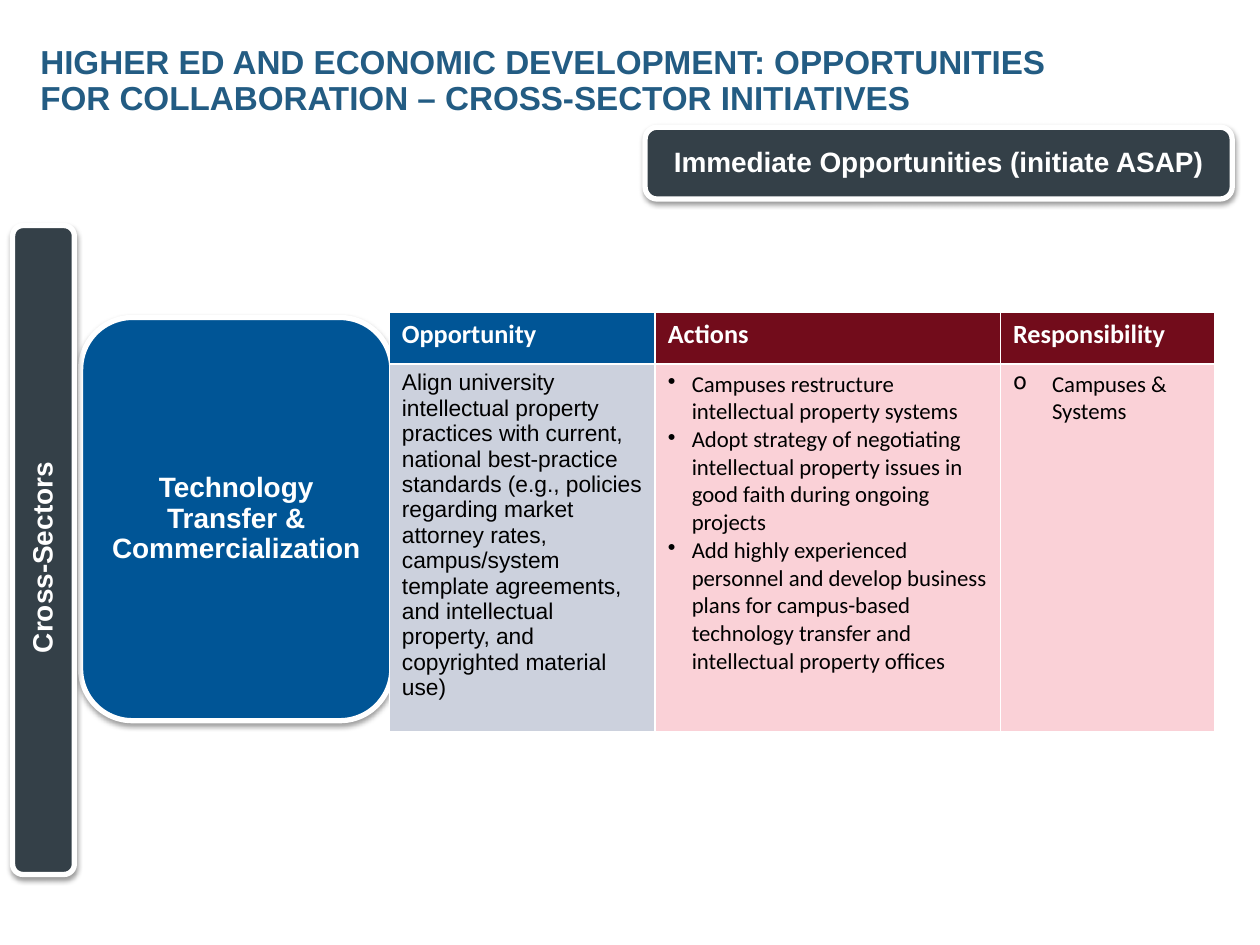
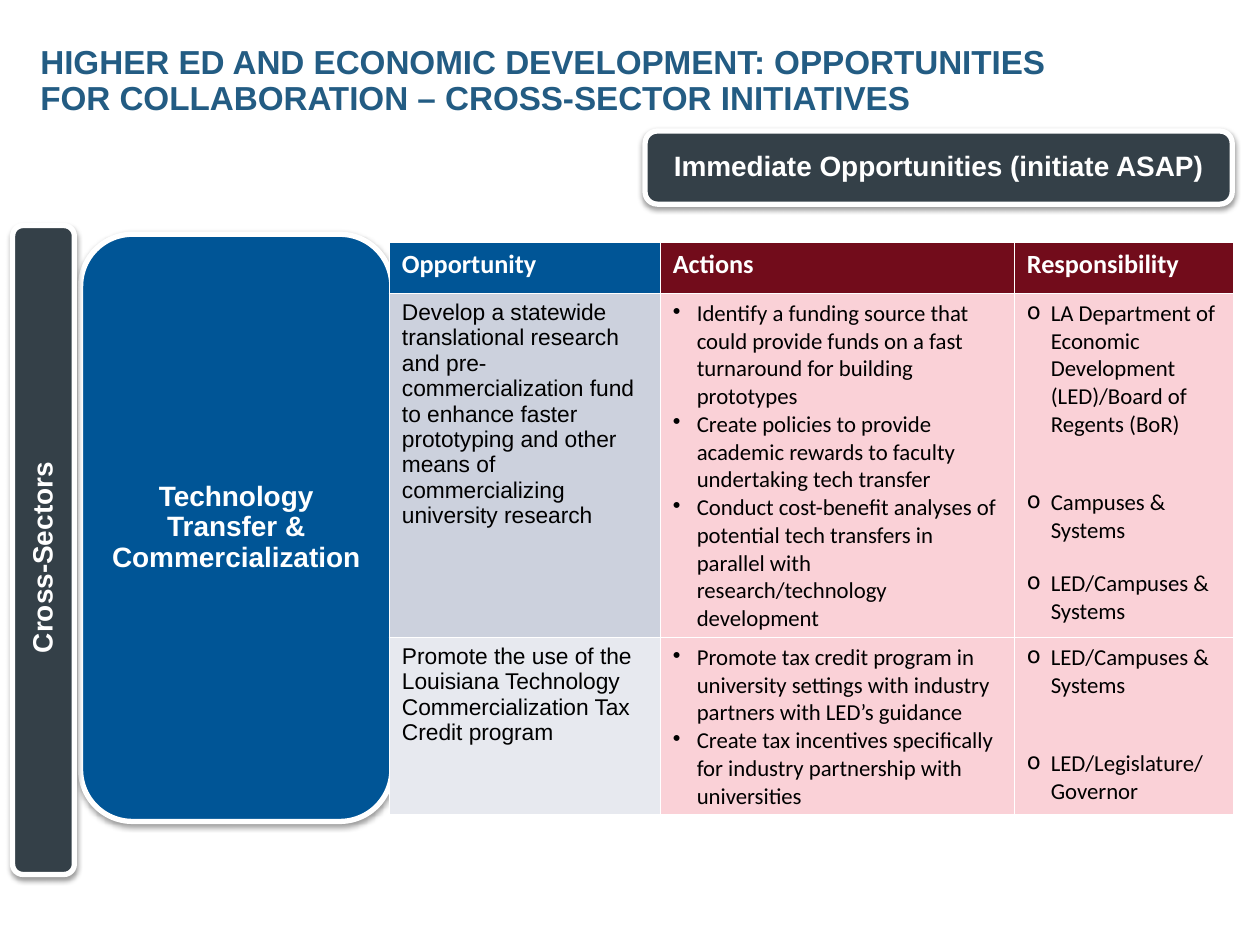
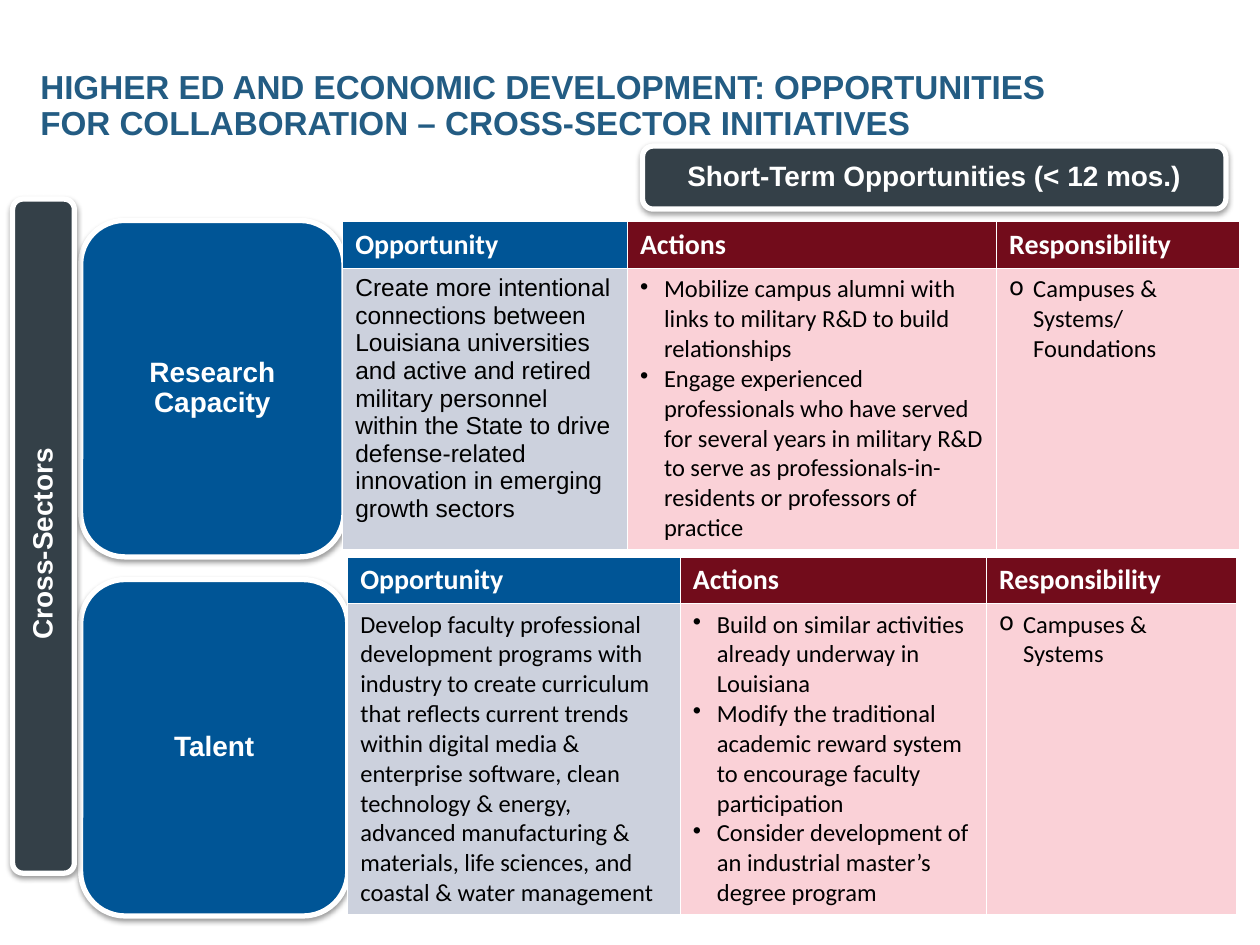
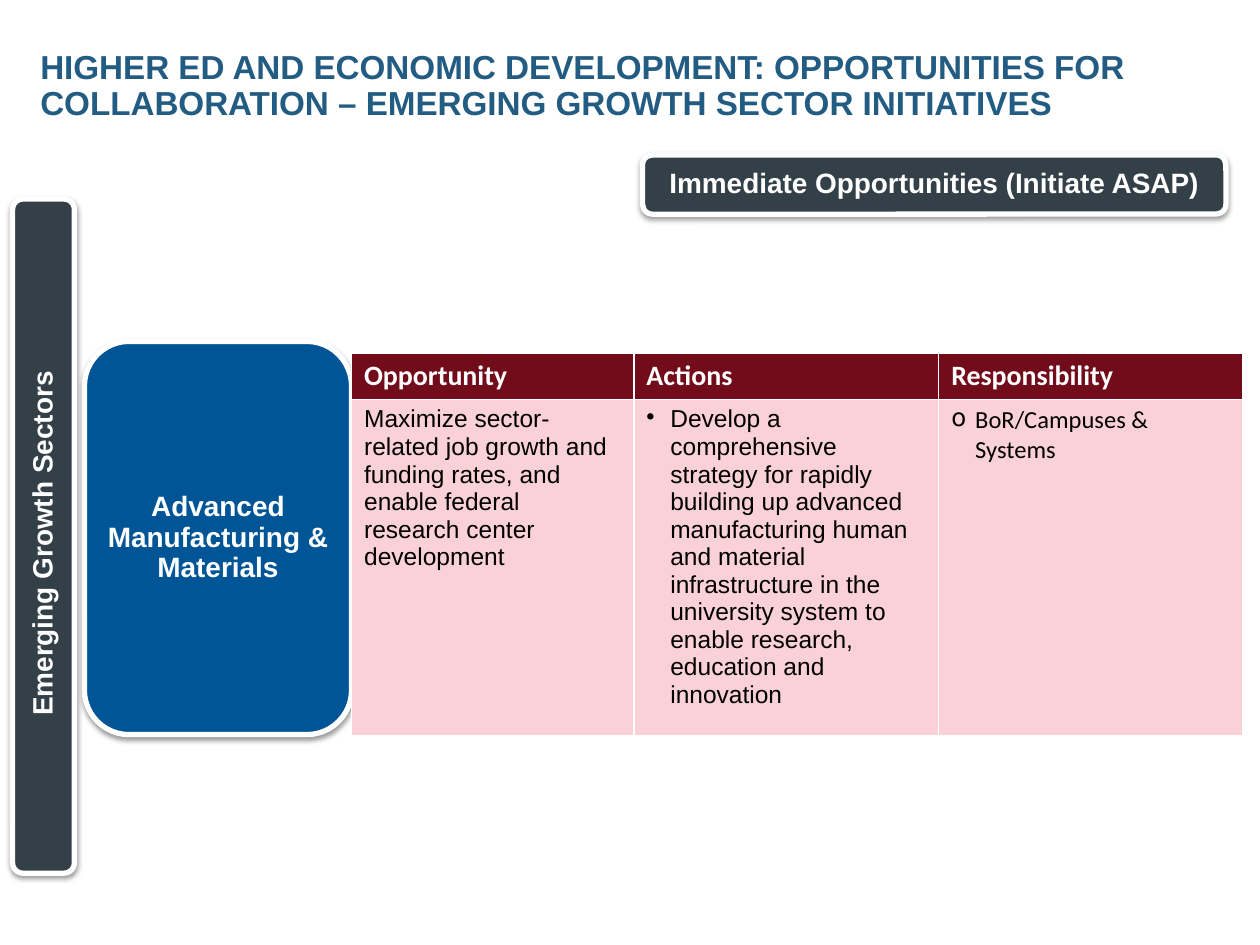
from lxml import etree
from pptx import Presentation
from pptx.dml.color import RGBColor
from pptx.enum.shapes import MSO_SHAPE
from pptx.enum.text import MSO_ANCHOR, PP_ALIGN
from pptx.oxml.ns import qn
from pptx.util import Pt

PX = 9144  # 100 px to the inch

ROUNDED = MSO_SHAPE.ROUNDED_RECTANGLE
MIDDLE = MSO_ANCHOR.MIDDLE
CENTER = PP_ALIGN.CENTER

WHITE = RGBColor(0xFF, 0xFF, 0xFF)
BLACK = RGBColor(0x00, 0x00, 0x00)
TITLE_BLUE = RGBColor(0x23, 0x5C, 0x83)
SLATE = RGBColor(0x34, 0x40, 0x48)
BLUE = RGBColor(0x00, 0x55, 0x96)
MAROON = RGBColor(0x72, 0x0C, 0x1B)
PINK = RGBColor(0xFA, 0xD1, 0xD7)
BLUE_GRAY = RGBColor(0xCC, 0xD1, 0xDD)
PALE_GRAY = RGBColor(0xE7, 0xE9, 0xEF)

ARIAL = "Arial"
CALIBRI = "Calibri"
HEADINGS = ("Opportunity", "Actions", "Responsibility")
BULLET_INDENT = 19
PANEL_MARGINS = (7, 3, 7, 3)
SECTOR_MARGINS = (5, 34, 5, 22)

TITLE_START = "HIGHER ED AND ECONOMIC DEVELOPMENT: OPPORTUNITIES FOR COLLABORATION – "
CROSS_TITLE = TITLE_START + "CROSS-SECTOR INITIATIVES"
GROWTH_TITLE = TITLE_START + "EMERGING GROWTH SECTOR INITIATIVES"

# Boxes are (left, top, width, height). A table row is the opportunity, its
# font, the actions, their font, and the responsibilities, each with the
# space in points above it.
SLIDES = [
    {
        "title": (CROSS_TITLE, (32, 36, 852, 58)),
        "banner": ("Immediate Opportunities (initiate ASAP)", (512, 101, 466, 57)),
        "sector": ("Cross-Sectors", (10, 179, 49, 515)),
        "topics": [("Technology Transfer & Commercialization", (64, 252, 247, 320))],
        "tables": [{
            "corner": (309, 248), "columns": (211, 274, 170), "heights": (41, 271),
            "size": 13, "opportunity_fill": BLUE, "circle_indent": 31,
            "rows": [(
                "Align university intellectual property practices with current, "
                "national best-practice standards (e.g., policies regarding market "
                "attorney rates, campus/system template agreements, and intellectual "
                "property, and copyrighted material use)", ARIAL,
                ["Campuses restructure intellectual property systems",
                 "Adopt strategy of negotiating intellectual property issues in good "
                 "faith during ongoing projects",
                 "Add highly experienced personnel and develop business plans for "
                 "campus-based technology transfer and intellectual property offices"],
                CALIBRI,
                [("Campuses & Systems", 0)],
            )],
        }],
    },
    {
        "title": (CROSS_TITLE, (32, 36, 852, 58)),
        "banner": ("Immediate Opportunities (initiate ASAP)", (512, 104, 466, 58)),
        "sector": ("Cross-Sectors", (10, 179, 49, 515)),
        "topics": [("Technology Transfer & Commercialization", (64, 186, 247, 466))],
        "tables": [{
            "corner": (309, 192), "columns": (215, 281, 174), "heights": (41, 273, 141),
            "size": 13, "opportunity_fill": BLUE, "circle_indent": BULLET_INDENT,
            "rows": [(
                "Develop a statewide translational research and pre-commercialization "
                "fund to enhance faster prototyping and other means of commercializing "
                "university research", ARIAL,
                ["Identify a funding source that could provide funds on a fast "
                 "turnaround for building prototypes",
                 "Create policies to provide academic rewards to faculty undertaking "
                 "tech transfer",
                 "Conduct cost-benefit analyses of potential tech transfers in parallel "
                 "with research/technology development"],
                CALIBRI,
                [("LA Department of Economic Development (LED)/Board of Regents (BoR)", 0),
                 ("Campuses & Systems", 29),
                 ("LED/Campuses & Systems", 14.5)],
            ), (
                "Promote the use of the Louisiana Technology Commercialization Tax "
                "Credit program", ARIAL,
                ["Promote tax credit program in university settings with industry "
                 "partners with LED’s guidance",
                 "Create tax incentives specifically for industry partnership with "
                 "universities"],
                CALIBRI,
                [("LED/Campuses & Systems", 0),
                 ("LED/Legislature/Governor", 29)],
            )],
        }],
    },
    {
        "title": (CROSS_TITLE, (32, 56, 852, 58)),
        "banner": ("Short-Term Opportunities (< 12 mos.)", (510, 116, 463, 50)),
        "sector": ("Cross-Sectors", (10, 158, 49, 535)),
        "topics": [("Research Capacity", (64, 175, 209, 267)),
                   ("Talent", (64, 460, 212, 267))],
        "tables": [{
            "corner": (272, 176), "columns": (226, 293, 193), "heights": (37, 223),
            "size": 14, "opportunity_fill": BLUE, "circle_indent": BULLET_INDENT,
            "rows": [(
                "Create more intentional connections between Louisiana universities "
                "and active and retired military personnel within the State to drive "
                "defense-related innovation in emerging growth sectors", ARIAL,
                ["Mobilize campus alumni with links to military R&D to build "
                 "relationships",
                 "Engage experienced professionals who have served for several years "
                 "in military R&D to serve as professionals-in-residents or professors "
                 "of practice"],
                CALIBRI,
                [("Campuses & Systems/ Foundations", 0)],
            )],
        }, {
            "corner": (276, 442), "columns": (264, 243, 199), "heights": (37, 247),
            "size": 14, "opportunity_fill": BLUE, "circle_indent": BULLET_INDENT,
            "rows": [(
                "Develop faculty professional development programs with industry to "
                "create curriculum that reflects current trends within digital media & "
                "enterprise software, clean technology & energy, advanced manufacturing "
                "& materials, life sciences, and coastal & water management", CALIBRI,
                ["Build on similar activities already underway in Louisiana",
                 "Modify the traditional academic reward system to encourage faculty "
                 "participation",
                 "Consider development of an industrial master’s degree program"],
                CALIBRI,
                [("Campuses & Systems", 0)],
            )],
        }],
    },
    {
        "title": (GROWTH_TITLE, (32, 26, 876, 86)),
        "banner": ("Immediate Opportunities (Initiate ASAP)", (510, 123, 463, 47)),
        "sector": ("Emerging Growth Sectors", (10, 158, 49, 535)),
        "topics": [("Advanced Manufacturing & Materials", (67, 271, 212, 312))],
        "tables": [{
            "corner": (279, 280), "columns": (224, 242, 241), "heights": (37, 252),
            "size": 14, "opportunity_fill": MAROON, "circle_indent": BULLET_INDENT,
            "rows": [(
                "Maximize sector-related job growth and funding rates, and enable "
                "federal research center development", ARIAL,
                ["Develop a comprehensive strategy for rapidly building up advanced "
                 "manufacturing human and material infrastructure in the university "
                 "system to enable research, education and innovation"],
                ARIAL,
                [("BoR/Campuses & Systems", 0)],
            )],
        }],
    },
]


def write(paragraph, text, font_name, size, color, bold):
    """Add a run, and give the paragraph and its end the same size for its bullet."""
    paragraph.font.name = font_name
    paragraph.font.size = Pt(size)
    run = paragraph.add_run()
    run.text = text
    run.font.name = font_name
    run.font.size = Pt(size)
    run.font.color.rgb = color
    run.font.bold = bold
    end = etree.SubElement(paragraph._p, qn("a:endParaRPr"), sz=str(size * 100))
    etree.SubElement(end, qn("a:latin"), typeface=font_name)


def add_panel(slide, text, box, fill, margins):
    """Add a shadowed rounded box with a white rim; margins are left, top, right, bottom."""
    shape = slide.shapes.add_shape(ROUNDED, *(PX * length for length in box))
    shape.fill.solid()
    shape.fill.fore_color.rgb = fill
    shape.line.color.rgb = WHITE
    shape.line.width = Pt(3)
    shape.shadow.inherit = False
    effects = shape._element.spPr.find(qn("a:effectLst"))
    shadow = etree.SubElement(effects, qn("a:outerShdw"), blurRad=str(Pt(3.1)),
                              dist=str(Pt(1.6)), dir="5400000", rotWithShape="0")
    shadow_color = etree.SubElement(shadow, qn("a:srgbClr"), val="000000")
    etree.SubElement(shadow_color, qn("a:alpha"), val="38000")
    frame = shape.text_frame
    frame.word_wrap = True
    frame.vertical_anchor = MIDDLE
    frame.margin_left, frame.margin_top, frame.margin_right, frame.margin_bottom = (
        PX * margin for margin in margins)
    paragraph = frame.paragraphs[0]
    paragraph.alignment = CENTER
    paragraph.line_spacing = 0.9
    write(paragraph, text, ARIAL, 16, WHITE, True)
    return shape


presentation = Presentation()
presentation.slide_width = 1000 * PX
presentation.slide_height = 750 * PX
blank_layout = presentation.slide_layouts[6]

for content in SLIDES:
    slide = presentation.slides.add_slide(blank_layout)

    title, title_box = content["title"]
    title_shape = slide.shapes.add_textbox(*(PX * length for length in title_box))
    frame = title_shape.text_frame
    frame.word_wrap = True
    frame.vertical_anchor = MIDDLE
    frame.margin_left = frame.margin_top = frame.margin_right = frame.margin_bottom = 0
    frame.paragraphs[0].line_spacing = 0.9
    write(frame.paragraphs[0], title, ARIAL, 19, TITLE_BLUE, True)

    add_panel(slide, *content["banner"], SLATE, PANEL_MARGINS)
    for label, box in content["topics"]:
        add_panel(slide, label, box, BLUE, PANEL_MARGINS)
    sector_bar = add_panel(slide, *content["sector"], SLATE, SECTOR_MARGINS)
    sector_bar.text_frame._txBody.bodyPr.set("vert", "vert270")

    for grid in content["tables"]:
        left, top = grid["corner"]
        columns, heights, size = grid["columns"], grid["heights"], grid["size"]
        table = slide.shapes.add_table(
            len(heights), len(columns), left * PX, top * PX,
            sum(columns) * PX, sum(heights) * PX).table
        for column, width in zip(table.columns, columns):
            column.width = width * PX
        for row, height in zip(table.rows, heights):
            row.height = height * PX

        header_fills = (grid["opportunity_fill"], MAROON, MAROON)
        for cell, heading, fill in zip(table.rows[0].cells, HEADINGS, header_fills):
            cell.fill.solid()
            cell.fill.fore_color.rgb = fill
            write(cell.text_frame.paragraphs[0], heading, CALIBRI, size + 2, WHITE, True)

        if grid["opportunity_fill"] == BLUE:
            opportunity_tints = (BLUE_GRAY, PALE_GRAY)
        else:
            opportunity_tints = (PINK, PINK)
        for row_index, row_content in enumerate(grid["rows"]):
            opportunity, opportunity_font, actions, actions_font, owners = row_content
            cell_contents = (
                ([(opportunity, 0)], opportunity_font, None, 0,
                 opportunity_tints[row_index]),
                ([(action, 0) for action in actions], actions_font, "•",
                 BULLET_INDENT, PINK),
                (owners, CALIBRI, "o", grid["circle_indent"], PINK),
            )
            for column_index, cell_content in enumerate(cell_contents):
                entries, font_name, bullet, indent, fill = cell_content
                cell = table.cell(row_index + 1, column_index)
                cell.fill.solid()
                cell.fill.fore_color.rgb = fill
                frame = cell.text_frame
                for entry_index, (text, space_before) in enumerate(entries):
                    paragraph = frame.add_paragraph() if entry_index else frame.paragraphs[0]
                    if bullet:
                        properties = paragraph._p.get_or_add_pPr()
                        properties.set("marL", str(indent * PX))
                        properties.set("indent", str(-indent * PX))
                        etree.SubElement(properties, qn("a:buChar"), char=bullet)
                    if space_before:
                        paragraph.space_before = Pt(space_before)
                    write(paragraph, text, font_name, size, BLACK, False)

presentation.save("out.pptx")
